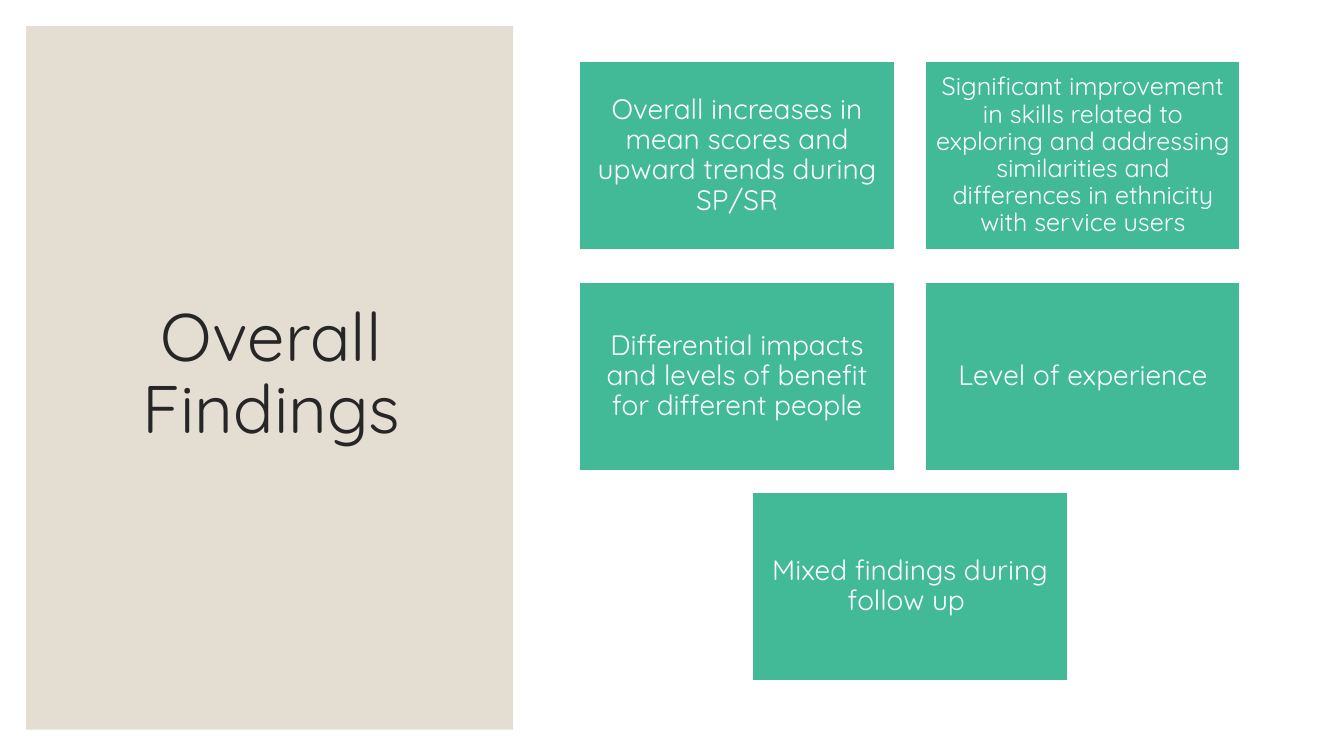
import pptx
import pptx.dml.color
import pptx.enum.shapes
import pptx.enum.text
import pptx.util


def color(hex_string):
    return pptx.dml.color.RGBColor.from_string(hex_string)


class FindingsSlide:
    """Style and drawing methods for a title panel beside a grid of cards."""

    FONT = "Quicksand"
    WHITE, SAND, GREEN, INK = "FFFFFF", "E3DED1", "42BA97", "262626"
    GRID_LEFT, GRID_TOP = 5.75, 0.61
    COLUMN_STEP, ROW_STEP = 3.43, 2.19
    CARD_WIDTH, CARD_HEIGHT = 3.12, 1.87

    def __init__(self, presentation):
        self.slide = presentation.slides.add_slide(presentation.slide_layouts[6])
        background = self.slide.background.fill
        background.solid()
        background.fore_color.rgb = color(self.WHITE)

    def rectangle(self, left, top, width, height, fill, line=None):
        box = self.slide.shapes.add_shape(
            pptx.enum.shapes.MSO_SHAPE.RECTANGLE,
            *map(pptx.util.Inches, (left, top, width, height)))
        box.shadow.inherit = False
        box.fill.solid()
        box.fill.fore_color.rgb = color(fill)
        if line:
            box.line.color.rgb = color(line)
            box.line.width = pptx.util.Pt(1)
        else:
            box.line.fill.background()
        return box

    def centered_text(self, frame, text, size, ink, inset):
        frame.word_wrap = True
        frame.vertical_anchor = pptx.enum.text.MSO_ANCHOR.MIDDLE
        frame.margin_left = frame.margin_right = pptx.util.Inches(inset)
        frame.margin_top = frame.margin_bottom = pptx.util.Inches(inset)
        paragraph = frame.paragraphs[0]
        paragraph.alignment = pptx.enum.text.PP_ALIGN.CENTER
        paragraph.line_spacing = 0.9
        run = paragraph.add_run()
        run.text = text
        run.font.name = self.FONT
        run.font.size = pptx.util.Pt(size)
        run.font.color.rgb = color(ink)

    def title(self, text):
        self.rectangle(0.26, 0.26, 4.83, 6.98, self.SAND)
        heading = self.slide.shapes.add_textbox(
            *map(pptx.util.Inches, (0.63, 0.61, 4.12, 6.24)))
        self.centered_text(heading.text_frame, text, 48, self.INK, 0.1)

    def card(self, column, row, text, size=20, inset=0.08):
        finding = self.rectangle(
            self.GRID_LEFT + column * self.COLUMN_STEP,
            self.GRID_TOP + row * self.ROW_STEP,
            self.CARD_WIDTH, self.CARD_HEIGHT, self.GREEN, self.WHITE)
        self.centered_text(finding.text_frame, text, size, self.WHITE, inset)


def main():
    presentation = pptx.Presentation()
    presentation.slide_width = pptx.util.Inches(13.33)
    presentation.slide_height = pptx.util.Inches(7.5)
    findings = FindingsSlide(presentation)

    # Title panel
    findings.title("Overall Findings")

    # Cards: two full rows, then one centred card set slightly closer
    findings.card(0, 0, "Overall increases in mean scores and upward trends "
                        "during SP/SR")
    findings.card(1, 0, "Significant improvement in skills related to exploring "
                        "and addressing similarities and differences in "
                        "ethnicity with service users", size=18, inset=0.07)
    findings.card(0, 1, "Differential impacts and levels of benefit for "
                        "different people")
    findings.card(1, 1, "Level of experience")
    findings.card(0.5, 1.95, "Mixed findings during follow up ")

    presentation.save("out.pptx")


if __name__ == "__main__":
    main()
